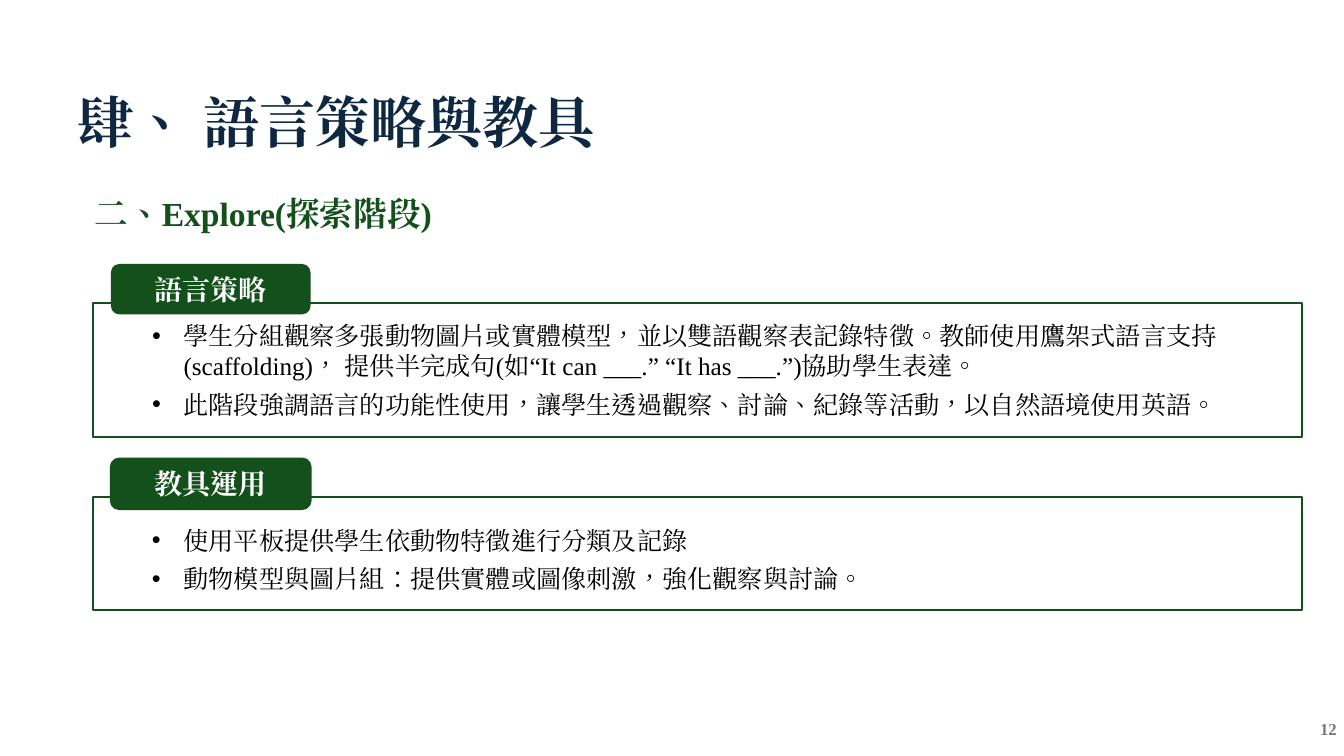
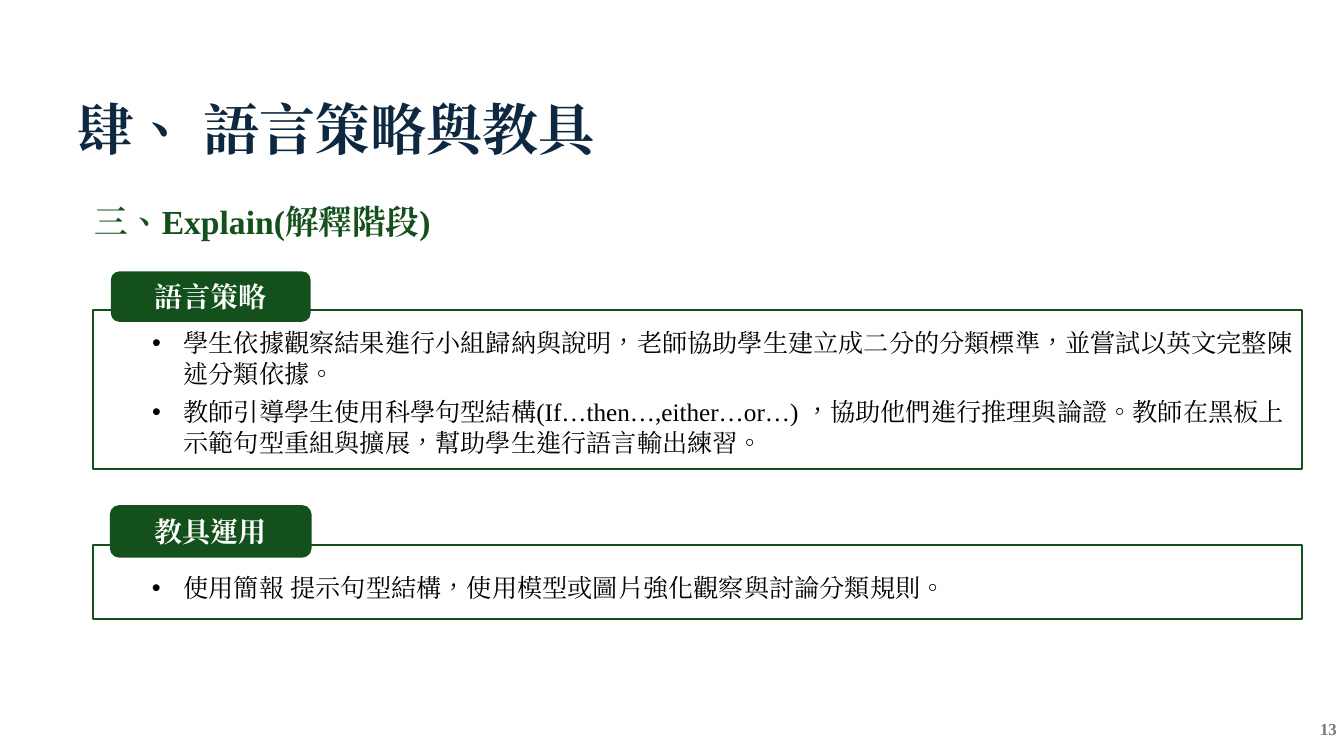
"""Build the two slides on language strategies and teaching aids."""
from dataclasses import dataclass

from lxml.etree import SubElement
from pptx import Presentation
from pptx.dml.color import RGBColor
from pptx.enum.shapes import MSO_SHAPE
from pptx.enum.text import MSO_ANCHOR, MSO_AUTO_SIZE, PP_ALIGN
from pptx.oxml.ns import qn
from pptx.util import Pt

TITLE = "肆、 語言策略與教具"
STAGES = [
    {
        "page": 12,
        "top": 44.6,
        "heading": "二、Explore(探索階段)",
        "strategy": (188.6, 95.8, [
            "學生分組觀察多張動物圖片或實體模型，並以雙語觀察表記錄特徵。教師使用鷹架式語言支持(scaffolding)， 提供半完成句(如“It can ___.” “It has ___.”)協助學生表達。",
            "此階段強調語言的功能性使用，讓學生透過觀察、討論、紀錄等活動，以自然語境使用英語。",
        ]),
        "aids": (327.6, 80.6, [
            "使用平板提供學生依動物特徵進行分類及記錄",
            "動物模型與圖片組：提供實體或圖像刺激，強化觀察與討論。",
        ]),
    },
    {
        "page": 13,
        "top": 49.7,
        "heading": "三、Explain(解釋階段)",
        "strategy": (193.9, 113.8, [
            "學生依據觀察結果進行小組歸納與說明，老師協助學生建立成二分的分類標準，並嘗試以英文完整陳述分類依據。",
            "教師引導學生使用科學句型結構(If…then…,either…or…) ，協助他們進行推理與論證。教師在黑板上示範句型重組與擴展，幫助學生進行語言輸出練習。",
        ]),
        "aids": (361.6, 53.3, [
            "使用簡報 提示句型結構，使用模型或圖片強化觀察與討論分類規則。",
        ]),
    },
]
SECTIONS = {
    "strategy": {"label": "語言策略", "text_drop": 9, "text_trim": 17, "text_width": 828.7, "tab_line": False},
    "aids": {"label": "教具運用", "text_drop": 16.3, "text_trim": 24, "text_width": 839.5, "tab_line": True},
}


@dataclass(frozen=True)
class Theme:
    """Fonts, colours and sizes shared by the slides."""
    font: str = "Times New Roman"
    navy: RGBColor = RGBColor(0x0E, 0x28, 0x41)
    green: RGBColor = RGBColor(0x13, 0x50, 0x1B)
    white: RGBColor = RGBColor(0xFF, 0xFF, 0xFF)
    black: RGBColor = RGBColor(0, 0, 0)
    grey: RGBColor = RGBColor(0x79, 0x79, 0x79)
    title_size: float = 40
    heading_size: float = 24
    label_size: float = 20
    body_size: float = 18
    page_size: float = 12
    line_width: float = 1.5


THEME = Theme()
FRAME_LEFT, FRAME_WIDTH, FRAME_DROP = 66.2, 864, 27.6
TAB_LEFT, TAB_WIDTH, TAB_HEIGHT = 79.2, 142.6, 36
BODY_LEFT, BODY_INDENT = 101.5, 22.5


def box(left, top, width, height):
    """Convert a box in points to lengths."""
    return Pt(left), Pt(top), Pt(width), Pt(height)


def add_text(paragraph, text, size, color, bold=True):
    """Add one formatted run to a paragraph."""
    run = paragraph.add_run()
    run.text = text
    run.font.size, run.font.bold = Pt(size), bold
    run.font.color.rgb = color
    run.font.name = THEME.font
    properties = run._r.get_or_add_rPr()
    properties.set("lang", "zh-TW")
    for script in ("a:ea", "a:cs"):
        SubElement(properties, qn(script), typeface=THEME.font)


def add_frame(shapes, bounds, anchor=MSO_ANCHOR.TOP):
    """Add a wrapping text box and return its text frame."""
    frame = shapes.add_textbox(*bounds).text_frame
    frame.word_wrap = True
    frame.vertical_anchor = anchor
    return frame


def add_panel(shapes, preset, bounds, fill, outlined=True):
    """Add a flat filled shape with an optional green outline."""
    panel = shapes.add_shape(preset, *bounds)
    panel.shadow.inherit = False
    panel.fill.solid()
    panel.fill.fore_color.rgb = fill
    if outlined:
        panel.line.color.rgb = THEME.green
        panel.line.width = Pt(THEME.line_width)
    else:
        panel.line.fill.background()
    return panel


def add_bullet(paragraph, text):
    """Fill a paragraph as a hanging bullet point."""
    paragraph.space_after = Pt(6)
    properties = paragraph._p.get_or_add_pPr()
    properties.set("marL", str(Pt(BODY_INDENT)))
    properties.set("indent", str(-Pt(BODY_INDENT)))
    SubElement(properties, qn("a:buFont"), typeface="Arial")
    SubElement(properties, qn("a:buChar"), char="•")
    add_text(paragraph, text, THEME.body_size, THEME.black, bold=False)


def add_section(slide, section, top, height, points):
    """Add a framed list with a labelled tab on its upper edge."""
    shapes = slide.shapes.add_group_shape().shapes
    frame_top = top + FRAME_DROP
    add_panel(shapes, MSO_SHAPE.RECTANGLE, box(FRAME_LEFT, frame_top, FRAME_WIDTH, height), THEME.white)
    body = add_frame(shapes, box(BODY_LEFT, frame_top + section["text_drop"],
                                 section["text_width"], height - section["text_trim"]))
    for index, point in enumerate(points):
        add_bullet(body.add_paragraph() if index else body.paragraphs[0], point)
    tab = add_panel(shapes, MSO_SHAPE.ROUNDED_RECTANGLE, box(TAB_LEFT, top, TAB_WIDTH, TAB_HEIGHT),
                    THEME.green, section["tab_line"])
    tab.text_frame.vertical_anchor = MSO_ANCHOR.MIDDLE
    label = tab.text_frame.paragraphs[0]
    label.alignment = PP_ALIGN.CENTER
    add_text(label, section["label"], THEME.label_size, THEME.white)


def add_stage(deck, stage):
    """Add the slide for one teaching stage."""
    slide = deck.slides.add_slide(deck.slide_layouts[5])
    title = slide.shapes.title
    title.left, title.top, title.width, title.height = box(48, stage["top"], 864, 84.2)
    title.text_frame.auto_size = MSO_AUTO_SIZE.NONE
    title.text_frame.vertical_anchor = MSO_ANCHOR.MIDDLE
    title_line = title.text_frame.paragraphs[0]
    title_line.alignment = PP_ALIGN.LEFT
    add_text(title_line, TITLE, THEME.title_size, THEME.navy)

    heading = add_frame(slide.shapes, box(60.5, stage["top"] + 90, 480, 36))
    add_text(heading.paragraphs[0], stage["heading"], THEME.heading_size, THEME.green)

    for key, section in SECTIONS.items():
        add_section(slide, section, *stage[key])

    page = add_frame(slide.shapes, box(882, 506.2, 80, 28.8), MSO_ANCHOR.MIDDLE).paragraphs[0]
    page.alignment = PP_ALIGN.RIGHT
    add_text(page, str(stage["page"]), THEME.page_size, THEME.grey)


def main():
    """Build and save the presentation."""
    deck = Presentation()
    deck.slide_width, deck.slide_height = Pt(960), Pt(540)
    for stage in STAGES:
        add_stage(deck, stage)
    deck.save("out.pptx")


if __name__ == "__main__":
    main()
